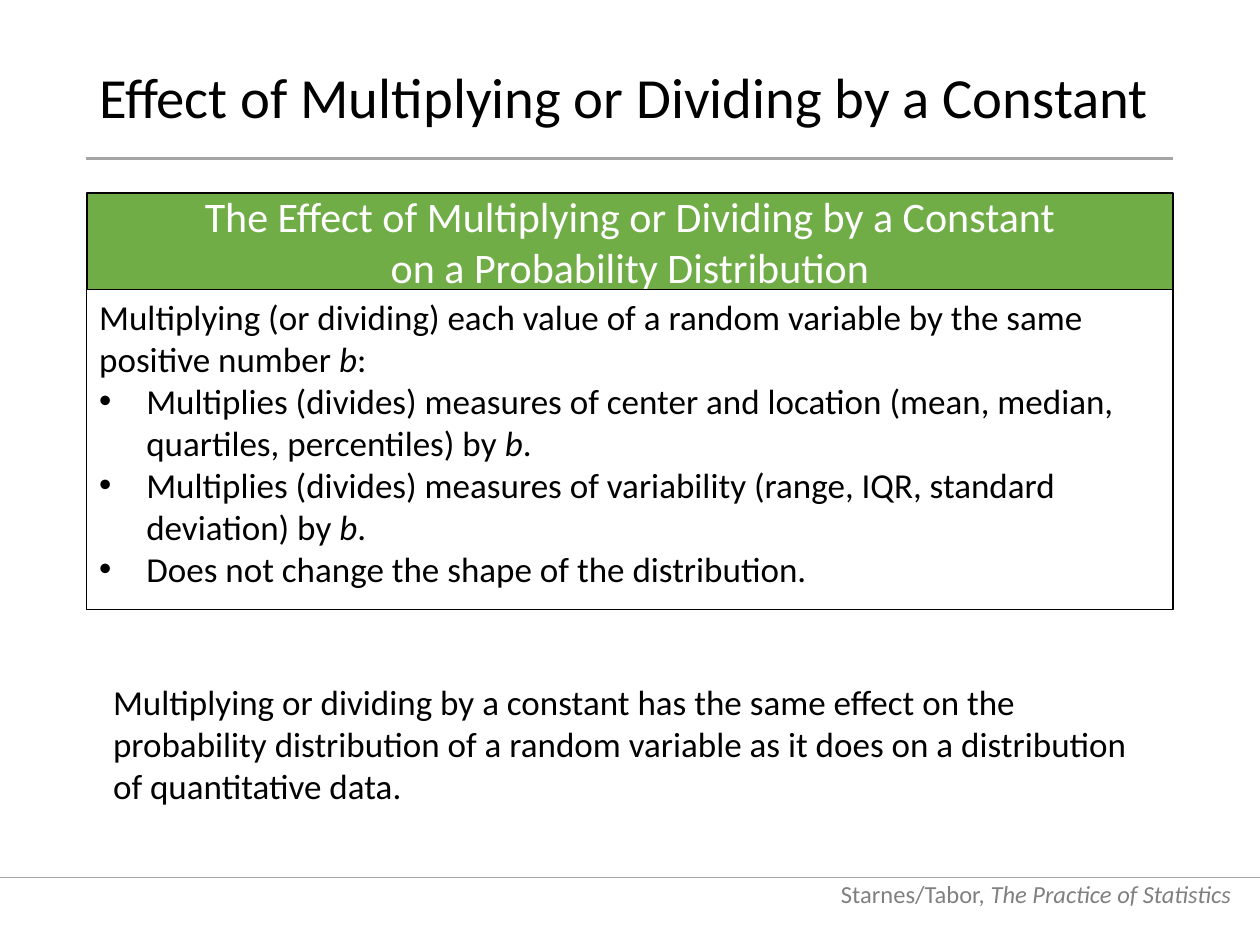
import pptx
import pptx.dml.color
import pptx.enum.shapes
import pptx.enum.text
import pptx.oxml
import pptx.oxml.ns
import pptx.util
from pptx.util import Cm

ALIGN = pptx.enum.text.PP_ALIGN
ANCHOR = pptx.enum.text.MSO_ANCHOR
BULLET = "• "
LEFT, WIDTH = Cm(1.75), Cm(21.9)


def color(hex_string):
    return pptx.dml.color.RGBColor.from_string(hex_string)


def write_text(shape, paragraphs, size, font_color="000000", align=ALIGN.LEFT,
               anchor=ANCHOR.TOP, line_spacing=None):
    """Fill a shape; *stars* mark italics, a leading bullet makes a list item, \\n breaks a line."""
    frame = shape.text_frame
    frame.word_wrap = True
    frame.vertical_anchor = anchor
    for index, text in enumerate(paragraphs):
        paragraph = frame.paragraphs[0] if index == 0 else frame.add_paragraph()
        if text.startswith(BULLET):
            text = text.removeprefix(BULLET)
            properties = paragraph._p.get_or_add_pPr()
            properties.set("marL", str(Cm(0.95)))
            properties.set("indent", str(-Cm(0.95)))
            namespace = pptx.oxml.ns.nsdecls("a")
            for element in ('buFont {} typeface="Arial"', 'buChar {} char="•"'):
                properties.append(pptx.oxml.parse_xml(f"<a:{element.format(namespace)}/>"))
        paragraph.alignment = align
        if line_spacing:
            paragraph.line_spacing = line_spacing
        for line_number, line in enumerate(text.split("\n")):
            if line_number:
                paragraph.add_line_break()
            for part_number, part in enumerate(line.split("*")):
                if not part:
                    continue
                run = paragraph.add_run()
                run.text = part
                run.font.name = "Calibri"
                run.font.size = pptx.util.Pt(size)
                run.font.color.rgb = color(font_color)
                run.font.italic = part_number % 2 == 1


presentation = pptx.Presentation()
presentation.slide_width = Cm(25.4)
presentation.slide_height = Cm(19.05)
slide = presentation.slides.add_slide(presentation.slide_layouts[6])

# Rules above the footer and below the title
for start, end, top, weight in ((0, 25.4, 17.68, 0.5), (1.73, 23.65, 3.2, 1.5)):
    rule = slide.shapes.add_connector(
        pptx.enum.shapes.MSO_CONNECTOR.STRAIGHT, Cm(start), Cm(top), Cm(end), Cm(top))
    rule.line.color.rgb = color("A5A5A5")
    rule.line.width = pptx.util.Pt(weight)
    rule._element.spPr.append(
        pptx.oxml.parse_xml(f"<a:effectLst {pptx.oxml.ns.nsdecls('a')}/>"))

footer = slide.shapes.add_textbox(Cm(16.43), Cm(17.42), Cm(8.64), Cm(1.02))
write_text(footer, ["Starnes/Tabor,* The Practice of Statistics*"], size=14,
           font_color="808080", align=ALIGN.RIGHT, anchor=ANCHOR.BOTTOM)

title = slide.shapes.add_textbox(LEFT, Cm(1.02), WIDTH, Cm(1.98))
write_text(title, ["Effect of Multiplying or Dividing by a Constant"], size=32.4,
           anchor=ANCHOR.MIDDLE, line_spacing=0.9)

# Rule box: green heading over an outlined body
rule_box = slide.shapes.add_group_shape()
rectangle = pptx.enum.shapes.MSO_SHAPE.RECTANGLE
heading = rule_box.shapes.add_shape(rectangle, LEFT, Cm(3.89), WIDTH, Cm(1.95))
body = rule_box.shapes.add_shape(rectangle, LEFT, Cm(5.84), WIDTH, Cm(6.45))
for shape, weight in ((heading, 1), (body, 0.75)):
    shape.shadow.inherit = False
    shape.line.color.rgb = color("000000")
    shape.line.width = pptx.util.Pt(weight)
heading.fill.solid()
heading.fill.fore_color.rgb = color("70AD47")
body.fill.background()

write_text(heading, ["The Effect of Multiplying or Dividing by a Constant\n"
                     "on a Probability Distribution"],
           size=24, font_color="FFFFFF", align=ALIGN.CENTER, anchor=ANCHOR.MIDDLE)
write_text(body, [
    "Multiplying (or dividing) each value of a random variable by the same",
    "positive number *b*:",
    BULLET + "Multiplies (divides) measures of center and location "
             "(mean, median, quartiles, percentiles) by *b*.",
    BULLET + "Multiplies (divides) measures of variability "
             "(range, IQR, standard deviation) by *b*.",
    BULLET + "Does not change the shape of the distribution.",
], size=20)

conclusion = slide.shapes.add_textbox(Cm(2.03), Cm(13.59), Cm(21.62), Cm(2.82))
write_text(conclusion, [
    "Multiplying or dividing by a constant has the same effect on the",
    "probability distribution of a random variable as it does on a distribution "
    "of quantitative data.",
], size=20)
conclusion.text_frame.auto_size = pptx.enum.text.MSO_AUTO_SIZE.SHAPE_TO_FIT_TEXT

presentation.save("out.pptx")
